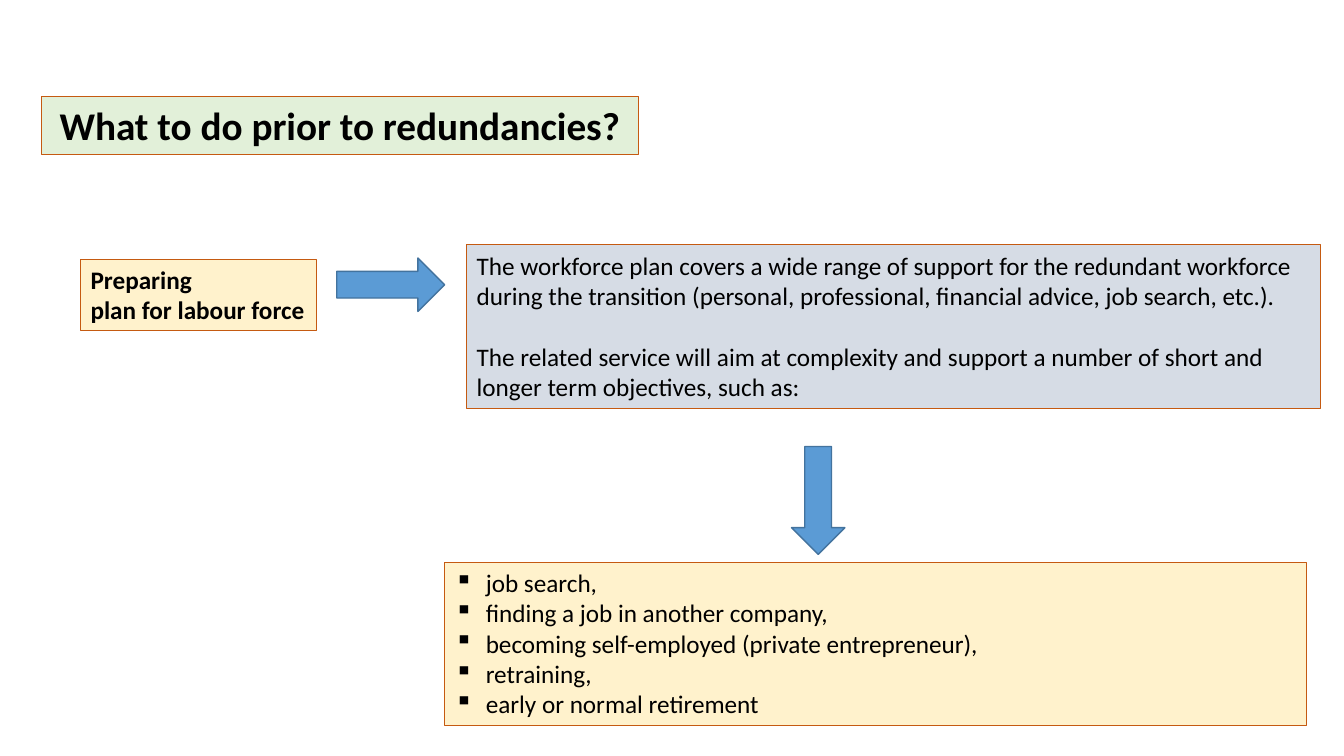
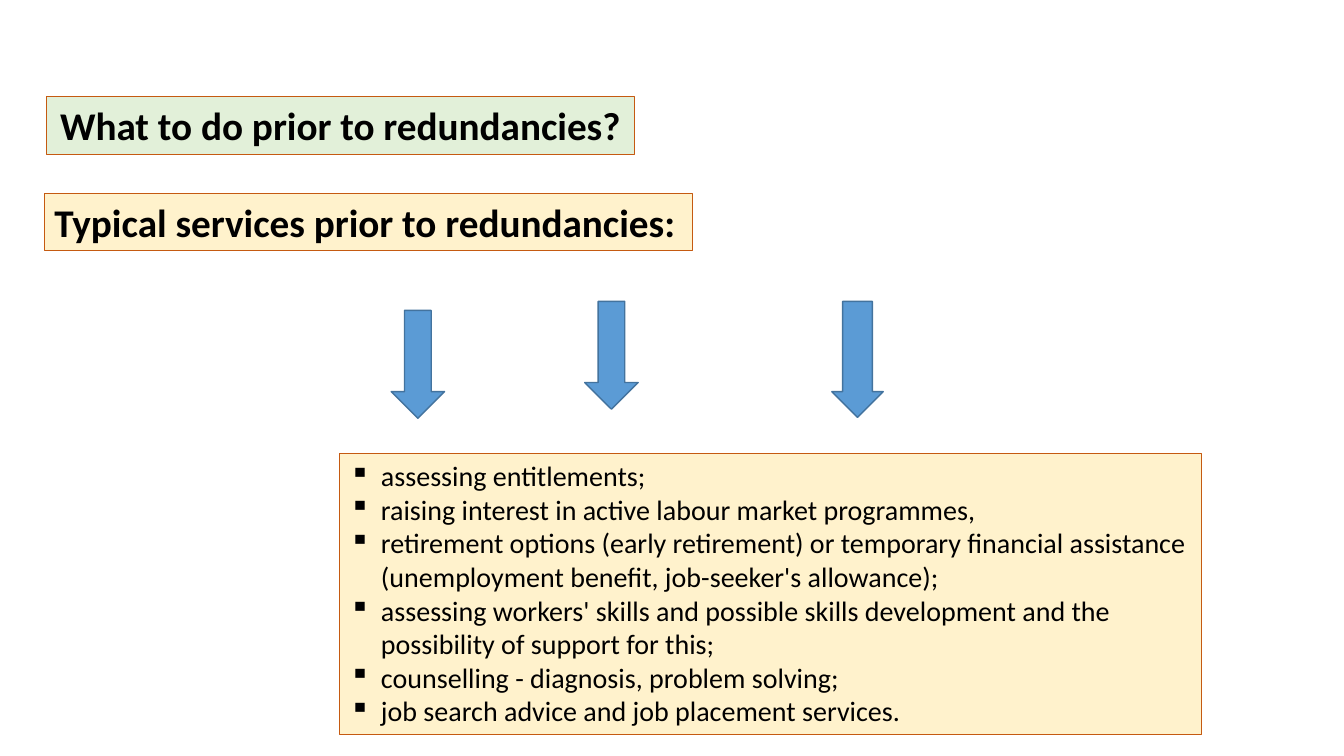
from lxml import etree
from pptx import Presentation
from pptx.dml.color import RGBColor
from pptx.enum.shapes import MSO_SHAPE as Preset
from pptx.enum.text import PP_ALIGN as Align
from pptx.oxml.ns import qn
from pptx.util import Inches, Pt

FONT = "Calibri"
BLACK = RGBColor(0x00, 0x00, 0x00)
GREEN = RGBColor(0xE2, 0xF0, 0xD9)
CREAM = RGBColor(0xFF, 0xF2, 0xCC)
GREY_BLUE = RGBColor(0xD6, 0xDC, 0xE5)
RUST = RGBColor(0xC5, 0x5A, 0x11)
ARROW_BLUE = RGBColor(0x5B, 0x9B, 0xD5)
ARROW_EDGE = RGBColor(0x43, 0x73, 0x9E)
TITLE = "What to do prior to redundancies?"
BULLET_INDENT = Inches(0.31)


def add_text(slide, place, paragraphs, fill=CREAM, size=18, bold=False,
             align=Align.LEFT, bullet=None, gap=0):
    """Add a framed text box; gap is the space in points between paragraphs."""
    box = slide.shapes.add_textbox(*map(Inches, place))
    box.fill.solid()
    box.fill.fore_color.rgb = fill
    box.line.color.rgb = RUST
    box.line.width = Pt(0.75)
    frame = box.text_frame
    frame.word_wrap = True
    for index, text in enumerate(paragraphs):
        paragraph = frame.paragraphs[0] if index == 0 else frame.add_paragraph()
        paragraph.alignment = align
        paragraph.space_before = Pt(gap if index else 0)
        run = paragraph.add_run()
        run.text = text
        run.font.name = FONT
        run.font.size = Pt(size)
        run.font.bold = bold
        run.font.color.rgb = BLACK
        if bullet:
            properties = paragraph._p.get_or_add_pPr()
            properties.set("marL", str(BULLET_INDENT))
            properties.set("indent", str(-BULLET_INDENT))
            etree.SubElement(properties, qn("a:buChar"), char=bullet)


def add_arrow(slide, preset, place, shaft=0.5):
    """Add a block arrow; shaft is the shaft's share of the arrow's breadth."""
    arrow = slide.shapes.add_shape(preset, *map(Inches, place))
    arrow.shadow.inherit = False
    arrow.adjustments[0] = shaft
    arrow.fill.solid()
    arrow.fill.fore_color.rgb = ARROW_BLUE
    arrow.line.color.rgb = ARROW_EDGE
    arrow.line.width = Pt(1)


deck = Presentation()
deck.slide_width = Inches(13.33)
deck.slide_height = Inches(7.5)
blank = deck.slide_layouts[6]
plan, services = (deck.slides.add_slide(blank) for _ in range(2))

for slide, left, width in ((plan, 0.41, 5.92), (services, 0.46, 5.83)):
    add_text(slide, (left, 0.96, width, 0.57), [TITLE],
             fill=GREEN, size=28, bold=True, align=Align.CENTER)

# Workforce plan and its objectives
add_text(plan, (0.8, 2.57, 2.34, 0.71),
         ["Preparing", "plan for labour force"], bold=True)
add_text(plan, (4.63, 2.43, 8.47, 1.62), [
    "The workforce plan covers a wide range of support for the redundant "
    "workforce during the transition (personal, professional, financial "
    "advice, job search, etc.).",
    "The related service will aim at complexity and support a number of "
    "short and longer term objectives, such as:",
], fill=GREY_BLUE, gap=22)
add_text(plan, (4.41, 5.58, 8.55, 1.62), [
    "job search,",
    "finding a job in another company,",
    "becoming self-employed (private entrepreneur),",
    "retraining,",
    "early or normal retirement",
], bullet="▪")
add_arrow(plan, Preset.RIGHT_ARROW, (3.34, 2.56, 1.07, 0.53))
add_arrow(plan, Preset.DOWN_ARROW, (7.85, 4.43, 0.53, 1.07))

# Typical services
add_text(services, (0.44, 1.92, 6.43, 0.57),
         ["Typical services prior to redundancies:"], size=28, bold=True)
add_text(services, (3.37, 4.5, 8.55, 2.79), [
    "assessing entitlements;",
    "raising interest in active labour market programmes,",
    "retirement options (early retirement) or temporary financial assistance "
    "(unemployment benefit, job-seeker's allowance);",
    "assessing workers' skills and possible skills development and the "
    "possibility of support for this;",
    "counselling - diagnosis, problem solving;",
    "job search advice and job placement services.",
], size=20, bullet="▪")
for place, shaft in (((3.88, 3.08, 0.53, 1.07), 0.5),
                     ((5.8, 2.99, 0.53, 1.07), 0.5),
                     ((8.25, 2.99, 0.51, 1.15), 0.58)):
    add_arrow(services, Preset.DOWN_ARROW, place, shaft)

deck.save("out.pptx")
